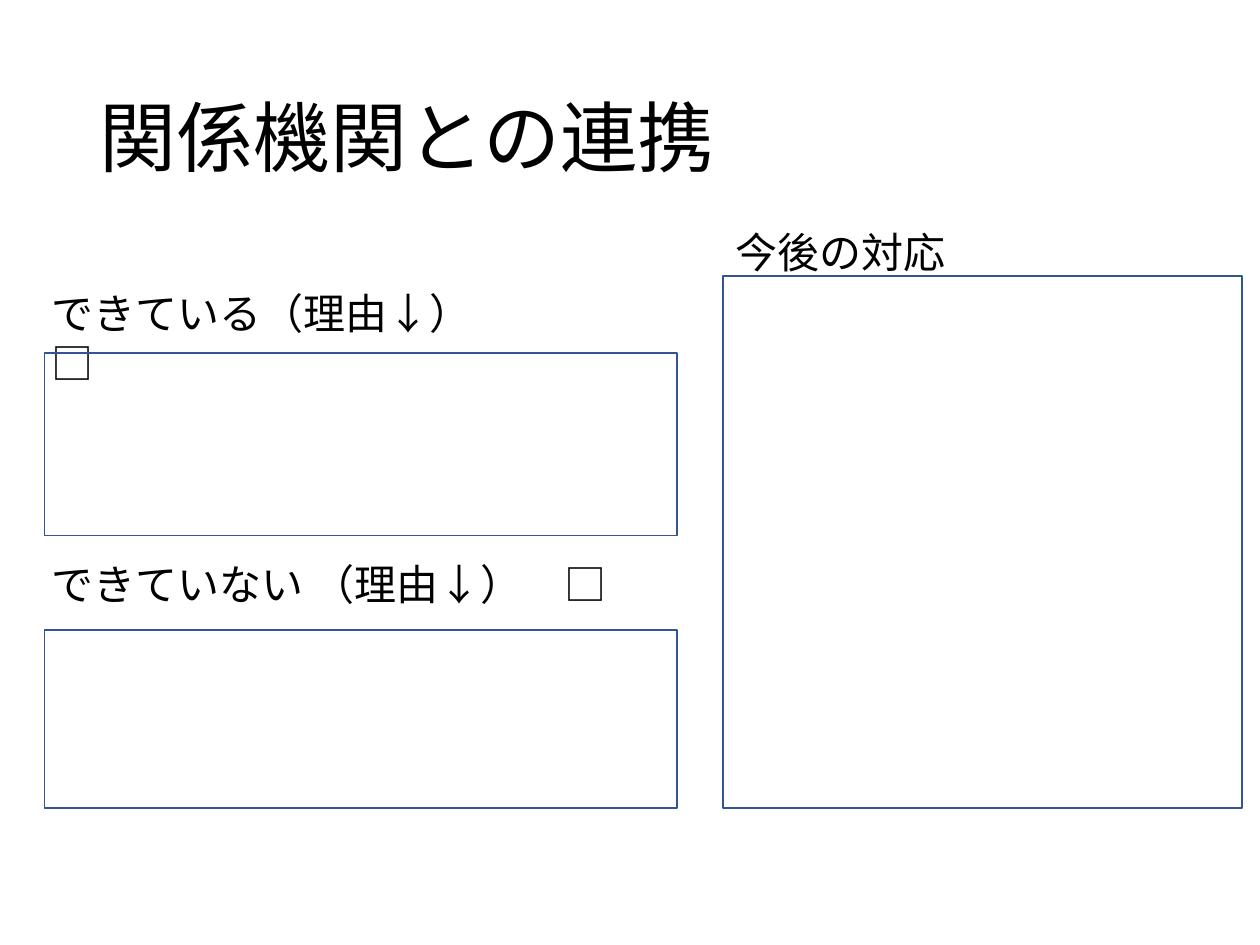
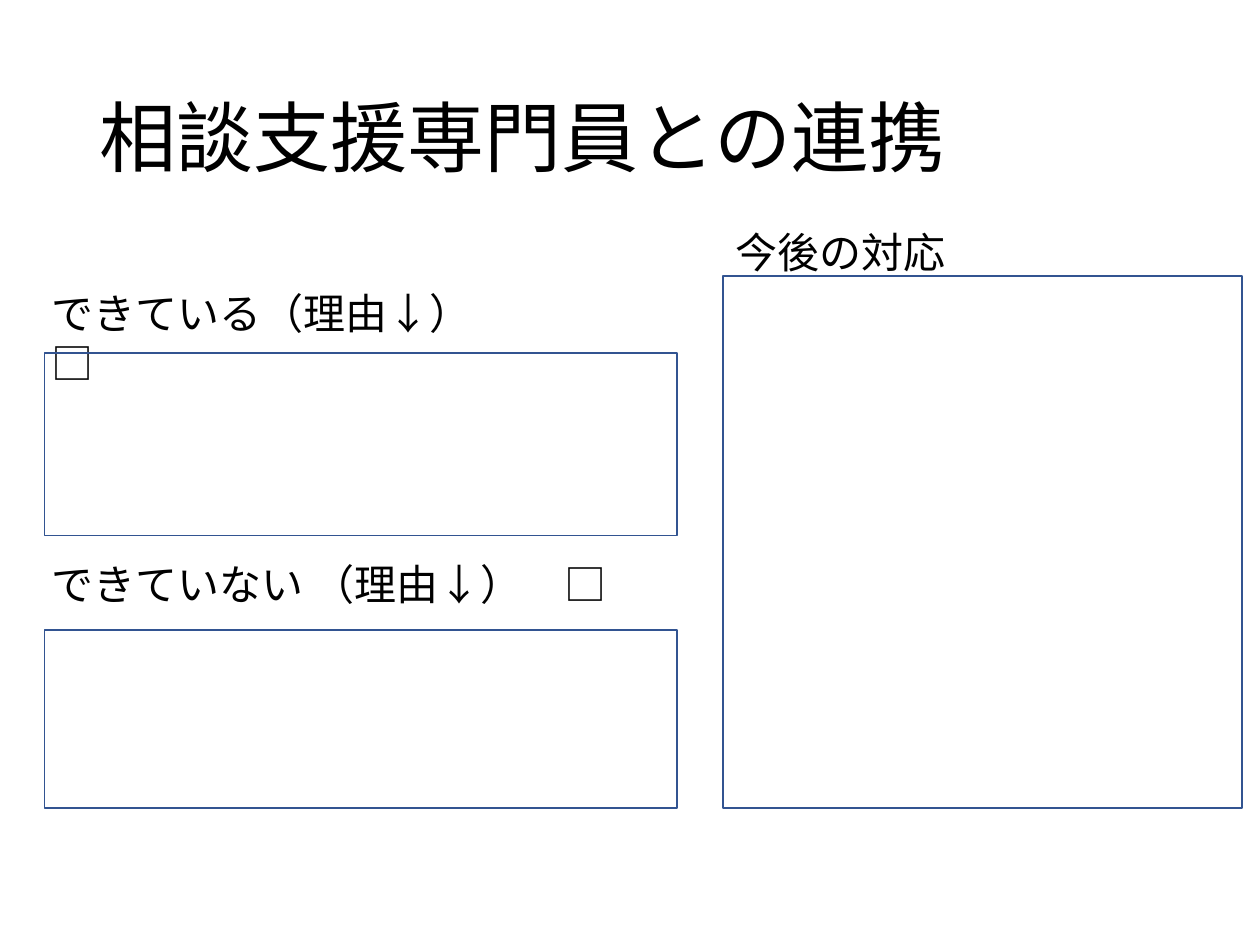
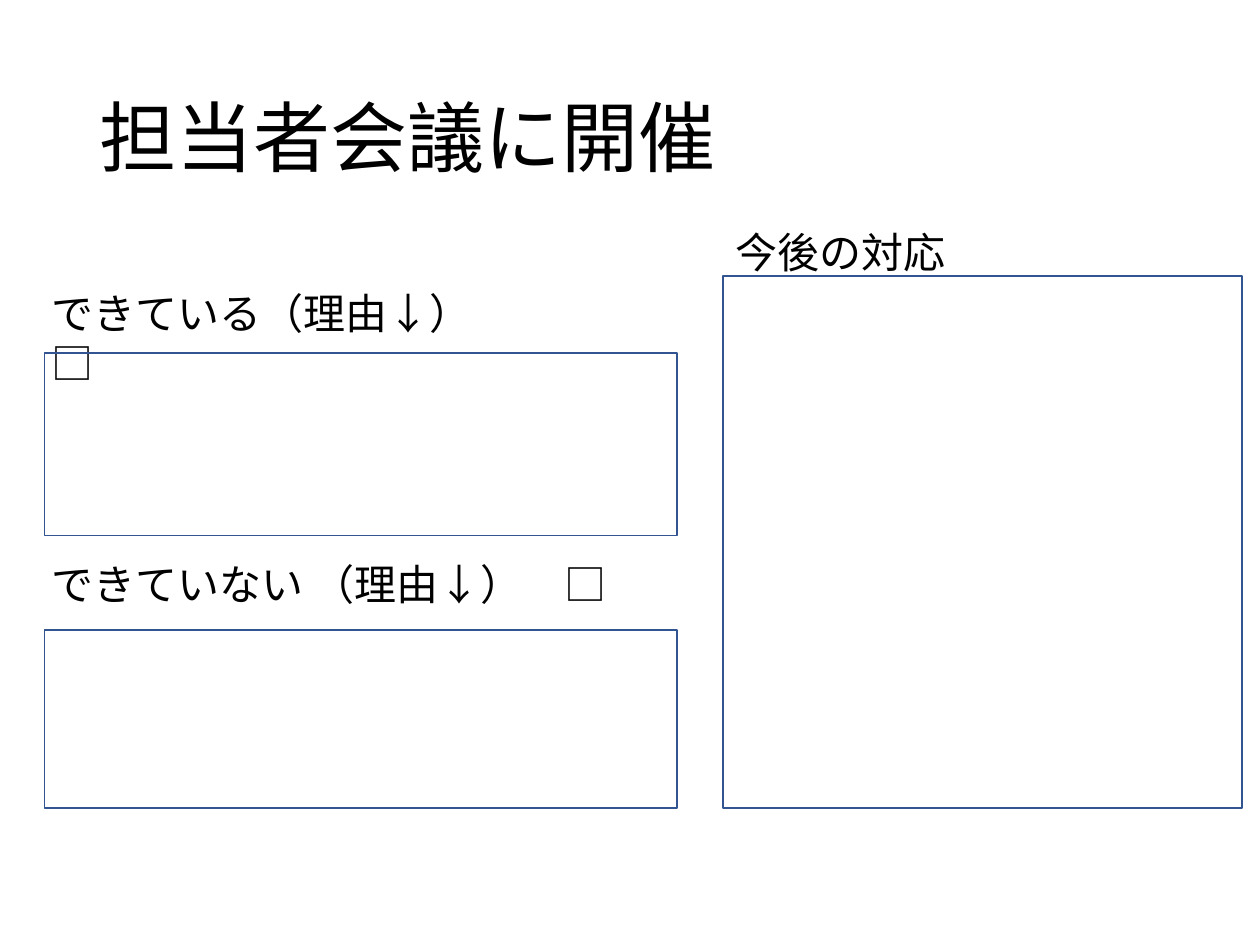
from dataclasses import dataclass

from pptx import Presentation
from pptx.dml.color import RGBColor
from pptx.enum.shapes import MSO_SHAPE
from pptx.enum.text import MSO_ANCHOR
from pptx.util import Pt


@dataclass(frozen=True)
class Theme:
    """Colours, font and type sizes shared by all slides."""
    font: str = "Calibri"
    ink: RGBColor = RGBColor(0x00, 0x00, 0x00)
    frame: RGBColor = RGBColor(0x32, 0x54, 0x91)
    title_size: int = 44
    label_size: int = 24
    line_width: int = 1


@dataclass(frozen=True)
class Box:
    """A rectangle in points."""
    left: float
    top: float
    width: float
    height: float

    def lengths(self):
        """Return the four sides as lengths for a new shape."""
        return [Pt(v) for v in (self.left, self.top, self.width, self.height)]


@dataclass(frozen=True)
class Panel:
    """An answer box and the label that starts above its top left corner."""
    label: str
    box: Box
    label_width: float
    label_rise: float
    label_outdent: float = 0


THEME = Theme()
SLIDE_WIDTH, SLIDE_HEIGHT = 720, 540
TITLE_BOX = Box(49.7, 28.8, 620.6, 104.4)
LABEL_HEIGHT = 36

REASON_LEFT, REASON_WIDTH, REASON_OUTDENT = 25.4, 361.4, 3.2
DONE_TOP, DONE_HEIGHT = 201.6, 104.4
NOT_DONE_TOP = 360
FOLLOW_UP_LEFT, FOLLOW_UP_TOP, FOLLOW_UP_WIDTH = 413.3, 157.7, 296.6
PANELS_BOTTOM = 461.7

DONE = Panel(
    label="できている（理由↓）\v□",
    box=Box(REASON_LEFT, DONE_TOP, REASON_WIDTH, DONE_HEIGHT),
    label_width=325.4, label_rise=41, label_outdent=REASON_OUTDENT)
NOT_DONE = Panel(
    label="できていない （理由↓）　□",
    box=Box(REASON_LEFT, NOT_DONE_TOP, REASON_WIDTH,
            PANELS_BOTTOM - NOT_DONE_TOP),
    label_width=355.7, label_rise=44.6, label_outdent=REASON_OUTDENT)
FOLLOW_UP = Panel(
    label="今後の対応",
    box=Box(FOLLOW_UP_LEFT, FOLLOW_UP_TOP, FOLLOW_UP_WIDTH,
            PANELS_BOTTOM - FOLLOW_UP_TOP),
    label_width=178.6, label_rise=31.7)

PANELS = [DONE, NOT_DONE, FOLLOW_UP]
TITLES = ["関係機関との連携", "相談支援専門員との連携", "担当者会議に開催"]


def add_text(s, box, text, size, anchor=MSO_ANCHOR.TOP, spacing=1.0):
    """Place one wrapped paragraph in the given box."""
    tf = s.shapes.add_textbox(*box.lengths()).text_frame
    tf.word_wrap = True
    tf.vertical_anchor = anchor
    p = tf.paragraphs[0]
    p.text = text
    p.line_spacing = spacing
    p.font.name = THEME.font
    p.font.size = Pt(size)
    p.font.color.rgb = THEME.ink


def add_title(s, box, text):
    """Place the slide title, centred vertically in its box."""
    add_text(s, box, text, THEME.title_size, MSO_ANCHOR.MIDDLE, 0.9)


def add_frame(s, box):
    """Draw an unfilled, outlined rectangle."""
    sp = s.shapes.add_shape(MSO_SHAPE.RECTANGLE, *box.lengths())
    sp.shadow.inherit = False
    sp.fill.background()
    sp.line.color.rgb = THEME.frame
    sp.line.width = Pt(THEME.line_width)


def add_panel(s, panel):
    """Place a panel's label relative to its answer box, then the box."""
    label_box = Box(panel.box.left - panel.label_outdent,
                    panel.box.top - panel.label_rise,
                    panel.label_width, LABEL_HEIGHT)
    add_text(s, label_box, panel.label, THEME.label_size)
    add_frame(s, panel.box)


def add_review_slide(prs, title):
    """Add a review form with its title and answer panels."""
    s = prs.slides.add_slide(prs.slide_layouts[6])
    add_title(s, TITLE_BOX, title)
    for panel in PANELS:
        add_panel(s, panel)


def main():
    """Build and save the presentation."""
    prs = Presentation()
    prs.slide_width, prs.slide_height = Pt(SLIDE_WIDTH), Pt(SLIDE_HEIGHT)
    for title in TITLES:
        add_review_slide(prs, title)
    prs.save("out.pptx")


if __name__ == "__main__":
    main()
